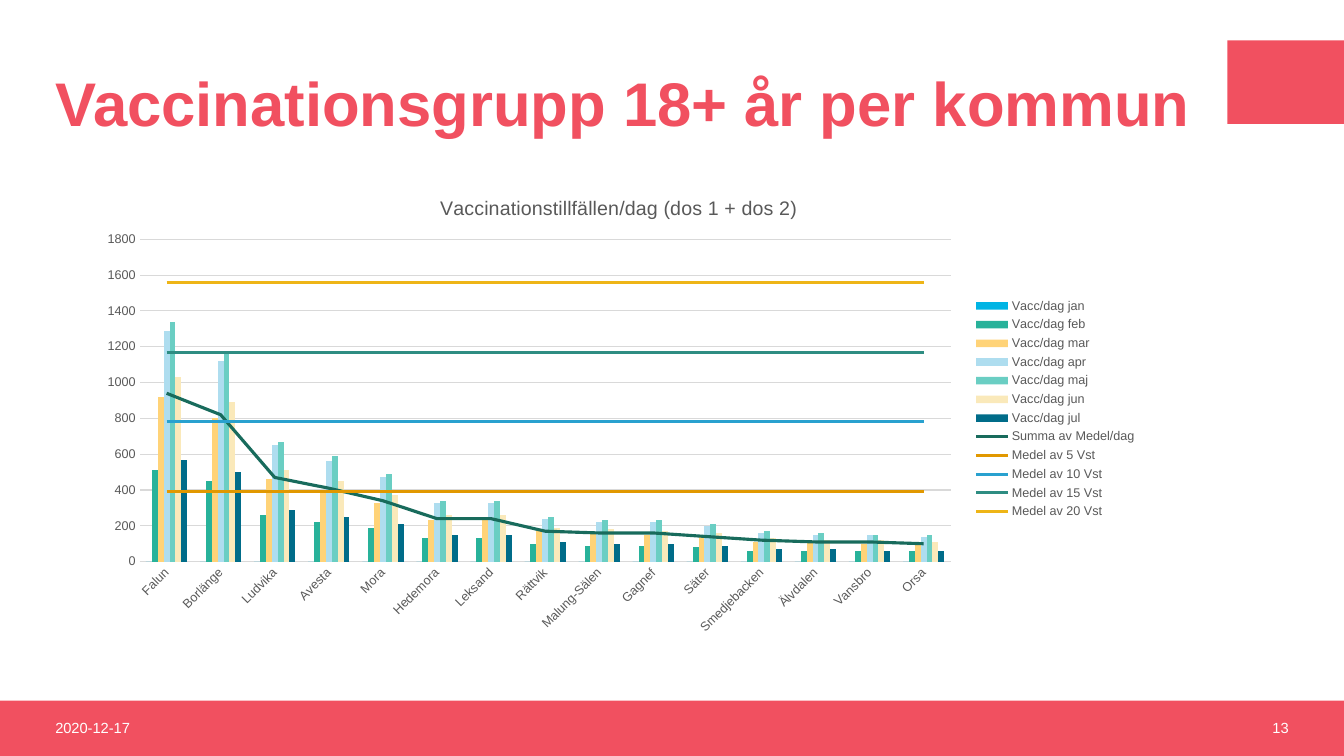
from lxml.etree import SubElement
from pptx import Presentation
from pptx.chart.data import CategoryChartData as ChartData
from pptx.dml.color import RGBColor
from pptx.enum.chart import (XL_CHART_TYPE as ChartType, XL_LEGEND_POSITION as LegendSide,
                             XL_TICK_MARK as TickMark)
from pptx.enum.shapes import MSO_SHAPE as Preset
from pptx.enum.text import MSO_ANCHOR as Anchor, MSO_AUTO_SIZE as AutoSize, PP_ALIGN as Align
from pptx.oxml import parse_xml
from pptx.oxml.ns import qn
from pptx.util import Inches, Pt

CHART_NAMESPACE = "http://schemas.openxmlformats.org/drawingml/2006/chart"

MUNICIPALITIES = ["Falun", "Borlänge", "Ludvika", "Avesta", "Mora", "Hedemora", "Leksand",
                  "Rättvik", "Malung-Sälen", "Gagnef", "Säter", "Smedjebacken", "Älvdalen",
                  "Vansbro", "Orsa"]
COUNT = len(MUNICIPALITIES)
MONTHS = [
    ("Vacc/dag jan", "00B4E4", [0] * COUNT),
    ("Vacc/dag feb", "28B29A",
     [510, 450, 260, 220, 190, 130, 130, 100, 90, 90, 80, 60, 60, 60, 60]),
    ("Vacc/dag mar", "FFD378",
     [920, 800, 460, 400, 330, 230, 230, 170, 160, 150, 140, 110, 110, 100, 100]),
    ("Vacc/dag apr", "AEDDEF",
     [1290, 1120, 650, 560, 470, 330, 330, 240, 220, 220, 200, 160, 150, 150, 140]),
    ("Vacc/dag maj", "6ACEC3",
     [1340, 1170, 670, 590, 490, 340, 340, 250, 230, 230, 210, 170, 160, 150, 150]),
    ("Vacc/dag jun", "FAE9BA",
     [1030, 890, 510, 450, 370, 260, 260, 190, 180, 170, 160, 130, 120, 120, 110]),
    ("Vacc/dag jul", "006C89",
     [570, 500, 290, 250, 210, 150, 150, 110, 100, 100, 90, 70, 70, 60, 60]),
]
MEANS = [
    ("Summa av Medel/dag", "186B5C",
     [940, 820, 470, 410, 340, 240, 240, 170, 160, 160, 140, 120, 110, 110, 100]),
    ("Medel av 5 Vst", "E19800", [390] * COUNT),
    ("Medel av 10 Vst", "29A1CF", [780] * COUNT),
    ("Medel av 15 Vst", "2E8D82", [1170] * COUNT),
    ("Medel av 20 Vst", "EEB517", [1560] * COUNT),
]


def color(value):
    """Turn a hex string into a colour."""
    return RGBColor.from_string(value)


def style_font(font, size, ink, bold=False):
    """Format a font."""
    font.name, font.size, font.bold = "Arial", Pt(size), bold
    font.color.rgb = color(ink)


def write(frame, text, size, ink, bold=False, align=Align.LEFT, spacing=None):
    """Put one formatted paragraph in a text frame."""
    frame.text = text
    para = frame.paragraphs[0]
    para.alignment, para.line_spacing = align, spacing
    style_font(para.runs[0].font, size, ink, bold)


def place(parent, index, **shares):
    """Give a chart part a manual layout in shares of the chart."""
    for old in parent.findall(qn("c:layout")):
        parent.remove(old)
    layout = parse_xml(f'<c:layout xmlns:c="{CHART_NAMESPACE}"><c:manualLayout/></c:layout>')
    manual = layout[0]
    if "w" in shares:
        SubElement(manual, qn("c:layoutTarget")).set("val", "inner")
    for mode in ("xMode", "yMode"):
        SubElement(manual, qn(f"c:{mode}")).set("val", "edge")
    for side, share in shares.items():
        SubElement(manual, qn(f"c:{side}")).set("val", str(share))
    parent.insert(index, layout)


def move_to_lines(chart, first):
    """Move the series from the given position on to a line plot on the same axes."""
    bars = chart.element.xpath(".//c:barChart")[0]
    lines = parse_xml(f'<c:lineChart xmlns:c="{CHART_NAMESPACE}"><c:grouping val="standard"/>'
                      '<c:varyColors val="0"/></c:lineChart>')
    for series in bars.findall(qn("c:ser"))[first:]:
        for flag in series.findall(qn("c:invertIfNegative")):
            series.remove(flag)
        marker = parse_xml(f'<c:marker xmlns:c="{CHART_NAMESPACE}">'
                           '<c:symbol val="none"/></c:marker>')
        series.find(qn("c:spPr")).addnext(marker)
        SubElement(series, qn("c:smooth")).set("val", "0")
        lines.append(series)
    SubElement(lines, qn("c:marker")).set("val", "1")
    for axis in bars.findall(qn("c:axId")):
        SubElement(lines, qn("c:axId")).set("val", axis.get("val"))
    bars.addnext(lines)


class Page:
    """Holds the style and the current slide on a grid of 160 columns by 90 rows."""
    accent, paper, ink, rule = "F15060", "FFFFFF", "595959", "D9D9D9"

    def __init__(self, deck):
        """Add a title-only slide."""
        self.slide = deck.slides.add_slide(deck.slide_layouts[5])
        self.column, self.row = deck.slide_width / 160, deck.slide_height / 90

    def area(self, left, top, width, height):
        """Turn grid cells into slide lengths."""
        return (round(left * self.column), round(top * self.row),
                round(width * self.column), round(height * self.row))

    def title(self, text, *cells):
        """Fill and place the title placeholder."""
        box = self.slide.shapes.title
        box.left, box.top, box.width, box.height = self.area(*cells)
        frame = box.text_frame
        frame.word_wrap, frame.auto_size = True, AutoSize.NONE
        frame.vertical_anchor = Anchor.MIDDLE
        write(frame, text, 44, self.accent, bold=True, spacing=0.9)

    def block(self, *cells):
        """Add a plain accent rectangle."""
        box = self.slide.shapes.add_shape(Preset.RECTANGLE, *self.area(*cells))
        box.shadow.inherit = False
        box.fill.solid()
        box.fill.fore_color.rgb = color(self.accent)
        box.line.fill.background()

    def label(self, text, *cells, align=Align.LEFT):
        """Add a small text on the footer band."""
        frame = self.slide.shapes.add_textbox(*self.area(*cells)).text_frame
        frame.word_wrap, frame.vertical_anchor = True, Anchor.MIDDLE
        write(frame, text, 10.5, self.paper, align=align)

    def chart(self, heading, categories, columns, lines, *cells):
        """Add a chart of clustered columns and lines."""
        data = ChartData(number_format="0")
        data.categories = categories
        for name, _, values in columns + lines:
            data.add_series(name, values)
        chart = self.slide.shapes.add_chart(
            ChartType.COLUMN_CLUSTERED, *self.area(*cells), data).chart
        style_font(chart.font, 10, "000000")
        plot = chart.plots[0]
        plot.gap_width, plot.overlap, plot.vary_by_categories = 219, 0, False
        for position, (series, (_, tone, _)) in enumerate(zip(plot.series, columns + lines)):
            if position < len(columns):
                series.format.fill.solid()
                series.format.fill.fore_color.rgb = color(tone)
            else:
                series.format.line.color.rgb = color(tone)
                series.format.line.width = Pt(2.25)
        move_to_lines(chart, len(columns))
        self.axes(chart)
        chart.has_title = True
        write(chart.chart_title.text_frame, heading, 14, self.ink, align=Align.CENTER)
        place(chart.element.xpath(".//c:title")[0], 1, x=0.33, y=0.04)
        place(chart.element.xpath(".//c:plotArea")[0], 0, x=0.05, y=0.14, w=0.765, h=0.685)
        chart.has_legend = True
        chart.legend.position, chart.legend.include_in_layout = LegendSide.RIGHT, False
        style_font(chart.legend.font, 9, self.ink)

    def axes(self, chart):
        """Format both axes of a chart."""
        across, up = chart.category_axis, chart.value_axis
        for axis in (across, up):
            axis.major_tick_mark = axis.minor_tick_mark = TickMark.NONE
            style_font(axis.tick_labels.font, 9, self.ink)
        chart.element.xpath(".//c:catAx/c:txPr/a:bodyPr")[0].set("rot", "-2700000")
        up.minimum_scale, up.maximum_scale, up.major_unit = 0, 1800, 200
        up.tick_labels.number_format = "0"
        up.tick_labels.number_format_is_linked = False
        up.format.line.fill.background()
        for line in (across.format.line, up.major_gridlines.format.line):
            line.color.rgb, line.width = color(self.rule), Pt(0.75)


def main():
    """Build the slide and save it."""
    deck = Presentation()
    deck.slide_width, deck.slide_height = Inches(13.33), Inches(7.5)
    page = Page(deck)
    page.block(0, 83.4, 160, 6.6)
    page.block(146.1, 4.8, 13.9, 9.96)
    page.title("Vaccinationsgrupp 18+ år per kommun", 5.4, 4.8, 139.3, 15.84)
    page.label("2020-12-17", 5.4, 83.4, 36, 6.5)
    page.label("13", 118.6, 83.4, 36, 6.5, align=Align.RIGHT)
    page.chart("Vaccinationstillfällen/dag (dos 1 + dos 2)", MUNICIPALITIES, MONTHS, MEANS,
               10.3, 20.64, 126.24, 56.04)
    deck.save("out.pptx")


if __name__ == "__main__":
    main()
